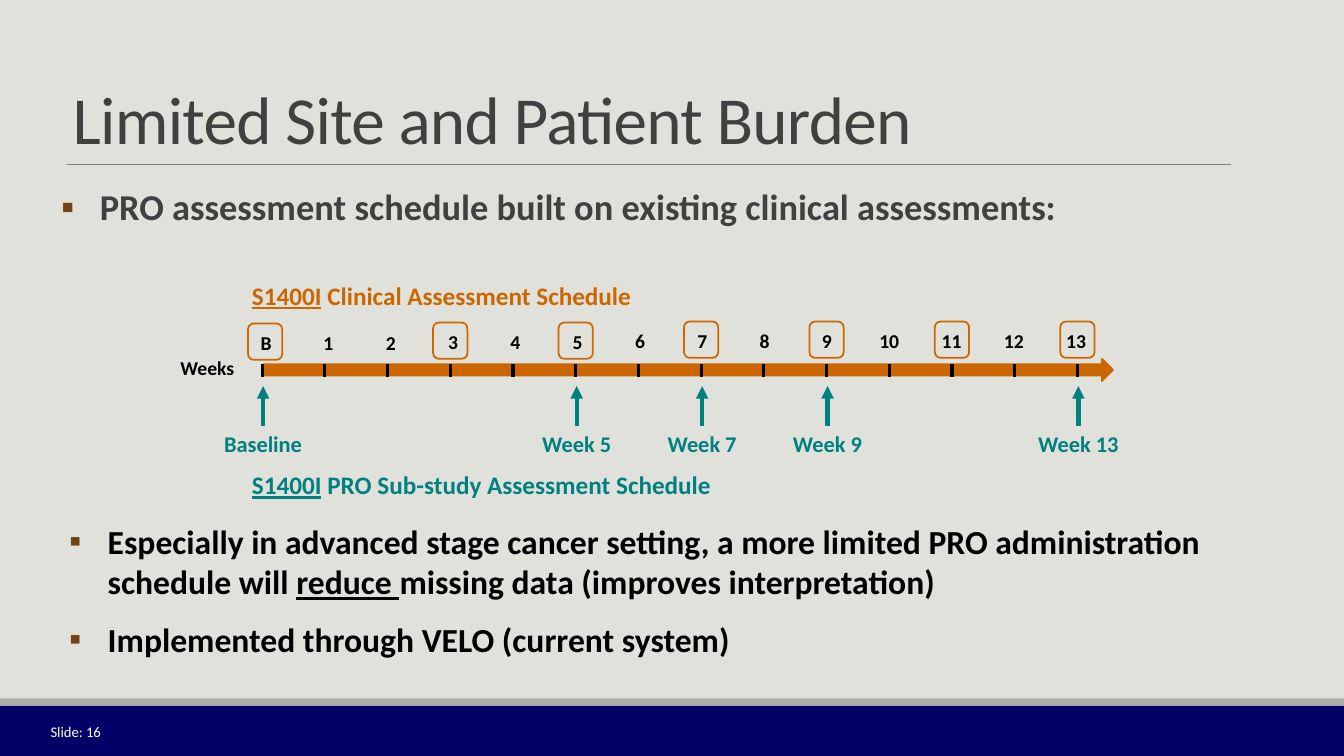
from lxml import etree
from pptx import Presentation
from pptx.dml.color import RGBColor
from pptx.enum.shapes import MSO_CONNECTOR, MSO_SHAPE
from pptx.enum.text import MSO_ANCHOR, MSO_AUTO_SIZE, PP_ALIGN
from pptx.oxml.ns import qn
from pptx.util import Inches, Pt

# Content: each paragraph is a list of (text, underlined) runs
TITLE = "Limited Site and Patient Burden"
INTRO = [[("PRO assessment schedule built on existing clinical assessments:", False)]]
CONCLUSIONS = [
    [("Especially in advanced stage cancer setting, a more limited PRO administration schedule will ", False),
     ("reduce ", True),
     ("missing data (improves interpretation)", False)],
    [("Implemented through VELO (current system)", False)],
]
CLINICAL_HEADING = [[("S1400I", True), (" Clinical Assessment Schedule", False)]]
PRO_HEADING = [[("S1400I", True), (" PRO Sub-study Assessment Schedule", False)]]
WEEK_LABELS = ["B"] + [str(week) for week in range(1, 14)]
CLINICAL_WEEKS = (0, 3, 5, 7, 9, 11, 13)
PRO_WEEKS = {0: "Baseline", 5: "Week 5", 7: "Week 7", 9: "Week 9", 13: "Week 13"}
SLIDE_LABEL = "Slide: 16"

# Style
FONT = "Calibri"
BACKGROUND = RGBColor(0xE1, 0xE1, 0xDB)
NAVY = RGBColor(0x00, 0x00, 0x66)
BAND_GRAY = RGBColor(0xAC, 0xAD, 0xA8)
RULE_GRAY = RGBColor(0x80, 0x80, 0x80)
DARK_GRAY = RGBColor(0x40, 0x40, 0x40)
BLACK = RGBColor(0x00, 0x00, 0x00)
WHITE = RGBColor(0xFF, 0xFF, 0xFF)
ORANGE = RGBColor(0xCC, 0x66, 0x00)
TEAL = RGBColor(0x00, 0x80, 0x80)
BULLET_BROWN = RGBColor(0x72, 0x43, 0x14)
LEFT, CENTER, RIGHT = PP_ALIGN.LEFT, PP_ALIGN.CENTER, PP_ALIGN.RIGHT
TOP, MIDDLE, BOTTOM = MSO_ANCHOR.TOP, MSO_ANCHOR.MIDDLE, MSO_ANCHOR.BOTTOM

# Timeline geometry, in inches
TICK_LEFT, TICK_STEP = 2.6, 0.622
LABEL_LEFT, LABEL_STEP = 2.64, 0.618
MARK_WIDTH, MARK_HEIGHT = 0.34, 0.36


def add_bullet(paragraph):
    properties = paragraph._p.get_or_add_pPr()
    properties.set("marL", str(Inches(0.38)))
    properties.set("indent", str(-Inches(0.38)))
    color = etree.SubElement(properties, qn("a:buClr"))
    etree.SubElement(color, qn("a:srgbClr"), val=str(BULLET_BROWN))
    etree.SubElement(properties, qn("a:buFont"), typeface=FONT)
    etree.SubElement(properties, qn("a:buChar"), char="▪")


def write_text(shape, paragraphs, size=14, color=BLACK, bold=True, align=LEFT, anchor=TOP,
               wrap=False, bullets=False, line_spacing=1.0, space_after=0, tracking=0):
    """Fill a shape with a string or with paragraphs made of runs."""
    if isinstance(paragraphs, str):
        paragraphs = [[(paragraphs, False)]]
    frame = shape.text_frame
    frame.word_wrap = wrap
    frame.auto_size = MSO_AUTO_SIZE.NONE if wrap else MSO_AUTO_SIZE.SHAPE_TO_FIT_TEXT
    frame.vertical_anchor = anchor
    for index, runs in enumerate(paragraphs):
        paragraph = frame.add_paragraph() if index else frame.paragraphs[0]
        if bullets:
            add_bullet(paragraph)
        paragraph.alignment = align
        paragraph.line_spacing = line_spacing
        paragraph.space_before = Pt(0)
        paragraph.space_after = Pt(space_after)
        for text, underlined in runs:
            run = paragraph.add_run()
            run.text = text
            font = run.font
            font.name, font.size, font.bold = FONT, Pt(size), bold
            font.underline = underlined
            font.color.rgb = color
            if tracking:
                font._element.set("spc", str(int(tracking * 100)))


def place(shape, left, top, width, height):
    shape.left, shape.top = Inches(left), Inches(top)
    shape.width, shape.height = Inches(width), Inches(height)


def add_text(slide, paragraphs, left, top, width, height, **text_format):
    box = slide.shapes.add_textbox(Inches(left), Inches(top), Inches(width), Inches(height))
    write_text(box, paragraphs, **text_format)


def add_shape(slide, preset, left, top, width, height, fill=None, line=None):
    shape = slide.shapes.add_shape(preset, Inches(left), Inches(top), Inches(width), Inches(height))
    shape.shadow.inherit = False
    if fill is None:
        shape.fill.background()
    else:
        shape.fill.solid()
        shape.fill.fore_color.rgb = fill
    if line is None:
        shape.line.fill.background()
    else:
        shape.line.color.rgb = line
        shape.line.width = Pt(1.25)


def add_line(slide, x1, y1, x2, y2, color, width, arrow=False):
    connector = slide.shapes.add_connector(
        MSO_CONNECTOR.STRAIGHT, Inches(x1), Inches(y1), Inches(x2), Inches(y2))
    connector.line.color.rgb = color
    connector.line.width = Pt(width)
    if arrow:
        etree.SubElement(connector.line._get_or_add_ln(), qn("a:headEnd"), type="triangle")
    etree.SubElement(connector._element.spPr, qn("a:effectLst"))


def add_timeline(slide):
    ticks = [TICK_LEFT + TICK_STEP * week for week in range(len(WEEK_LABELS))]

    # PRO assessments below the axis
    for week, label in PRO_WEEKS.items():
        center = ticks[week] + 0.01
        add_line(slide, center, 3.83, center, 4.23, TEAL, 3, arrow=True)
        add_text(slide, label, center - 0.5, 4.22, 1, 0.37, size=16, color=TEAL, align=CENTER)

    # Axis with one tick a week
    add_shape(slide, MSO_SHAPE.RIGHT_ARROW, 2.61, 3.56, 8.43, 0.22, fill=ORANGE, line=ORANGE)
    for tick in ticks:
        add_line(slide, tick, 3.61, tick, 3.74, BLACK, 2.25)
    add_text(slide, "Weeks", 1.69, 3.48, 0.74, 0.34)

    # Week labels, with frames on the clinical assessments
    for week, label in enumerate(WEEK_LABELS):
        top = max(3.21, 3.23 - 0.01 * (week // 3))
        center = LABEL_LEFT + LABEL_STEP * week
        add_text(slide, label, center - 0.2, top, 0.4, 0.34, align=CENTER)
        if week in CLINICAL_WEEKS:
            mark_center = max(ticks[week], 2.63)
            add_shape(slide, MSO_SHAPE.ROUNDED_RECTANGLE, mark_center - MARK_WIDTH / 2,
                      top - 0.02, MARK_WIDTH, MARK_HEIGHT, line=ORANGE)

    # Schedule headings
    add_text(slide, CLINICAL_HEADING, 2.4, 2.73, 3.99, 0.4, size=18, color=ORANGE)
    add_text(slide, PRO_HEADING, 2.4, 4.61, 4.79, 0.4, size=18, color=TEAL)


def main():
    presentation = Presentation()
    presentation.slide_width, presentation.slide_height = Inches(13.33), Inches(7.5)
    slide = presentation.slides.add_slide(presentation.slide_layouts[1])
    slide.background.fill.solid()
    slide.background.fill.fore_color.rgb = BACKGROUND

    # Footer bands and title rule
    add_shape(slide, MSO_SHAPE.RECTANGLE, 0, 7, 13.33, 0.5, fill=NAVY)
    add_shape(slide, MSO_SHAPE.RECTANGLE, 0, 6.93, 13.33, 0.07, fill=BAND_GRAY)
    add_line(slide, 0.66, 1.63, 12.21, 1.63, RULE_GRAY, 0.5)

    # Title and introduction
    title, body = slide.placeholders
    place(title, 0.62, 0.54, 9, 1.08)
    write_text(title, TITLE, size=48, color=DARK_GRAY, bold=False, anchor=BOTTOM,
               wrap=True, line_spacing=0.85, tracking=-0.5)
    place(body, 0.61, 1.83, 11.6, 0.69)
    body.text_frame.margin_left = body.text_frame.margin_right = 0
    write_text(body, INTRO, size=26, color=DARK_GRAY, wrap=True, bullets=True,
               line_spacing=0.9, space_after=4)

    add_timeline(slide)

    # Conclusions and slide label
    add_text(slide, CONCLUSIONS, 0.59, 5.12, 11.72, 1.61, size=24, wrap=True,
             bullets=True, space_after=12)
    add_text(slide, SLIDE_LABEL, 0.07, 7.06, 1.03, 0.4, size=10.5, color=WHITE, bold=False,
             align=RIGHT, anchor=MIDDLE, wrap=True)

    presentation.save("out.pptx")


if __name__ == "__main__":
    main()
